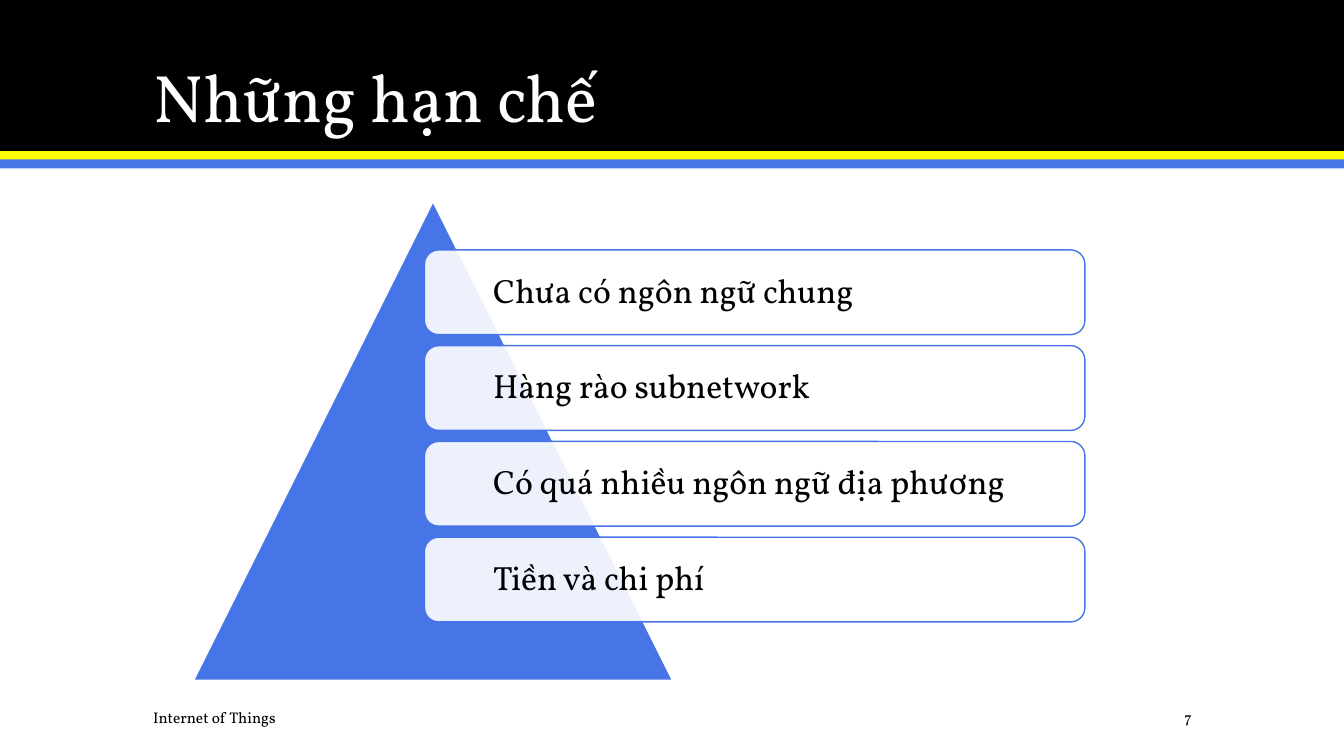
from lxml import etree
from pptx import Presentation
from pptx.dml.color import RGBColor
from pptx.enum.shapes import MSO_SHAPE
from pptx.enum.text import MSO_ANCHOR, MSO_AUTO_SIZE, PP_ALIGN
from pptx.oxml.ns import qn
from pptx.util import Inches, Pt

RECT, TRIANGLE = MSO_SHAPE.RECTANGLE, MSO_SHAPE.ISOSCELES_TRIANGLE
CARD = MSO_SHAPE.ROUNDED_RECTANGLE
MIDDLE, BOTTOM = MSO_ANCHOR.MIDDLE, MSO_ANCHOR.BOTTOM
LEFT, RIGHT = PP_ALIGN.LEFT, PP_ALIGN.RIGHT

# Content
TITLE = "Những hạn chế"
LIMITATIONS = [
    "Chưa có ngôn ngữ chung",
    "Hàng rào subnetwork",
    "Có quá nhiều ngôn ngữ địa phương",
    "Tiền và chi phí",
]
FOOTER = "Internet of Things"
PAGE = "7"

# Style and layout, in inches
FONT = "Vollkorn"
BLACK, WHITE, YELLOW, BLUE = "000000", "FFFFFF", "FFFF00", "4775E7"
SLIDE_W, SLIDE_H = 13.33, 7.5
BANDS = [(0, 1.5, BLACK), (1.5, 0.09, YELLOW), (1.58, 0.09, BLUE)]
TITLE_BOX = (1.42, 0.28, 10.5, 1.13)
PYRAMID_BOX = (1.92, 2, 4.75, 4.75)
CARD_LEFT, CARD_TOP, CARD_W, CARD_H = 4.21, 2.48, 6.55, 0.84
CARD_PITCH = 0.95
CARD_INDENT = 0.64
FOOTER_ITEMS = [
    (PAGE, (10.42, 6.97, 1.5, 0.3), RIGHT),
    (FOOTER, (1.42, 6.97, 6.83, 0.3), LEFT),
]


def color(hex_value):
    return RGBColor.from_string(hex_value)


def add_block(slide, preset, box, fill, line=None):
    block = slide.shapes.add_shape(preset, *map(Inches, box))
    block.shadow.inherit = False
    block.fill.solid()
    block.fill.fore_color.rgb = color(fill)
    if line:
        block.line.color.rgb = color(line)
        block.line.width = Pt(1)
    else:
        block.line.fill.background()
    return block


def set_opacity(block, percent):
    fill_color = block.fill._xPr.find(qn("a:solidFill"))[0]
    etree.SubElement(fill_color, qn("a:alpha"), val=str(percent * 1000))


def write(holder, text, size, ink=BLACK, align=LEFT, spacing=1.0, **frame_format):
    frame = holder.text_frame
    frame_values = {
        "word_wrap": True,
        "auto_size": MSO_AUTO_SIZE.NONE,
        "vertical_anchor": MIDDLE,
        **frame_format,
    }
    for name, value in frame_values.items():
        setattr(frame, name, value)
    frame.text = text
    paragraph = frame.paragraphs[0]
    paragraph.alignment = align
    paragraph.line_spacing = spacing
    for name, value in {"name": FONT, "size": Pt(size)}.items():
        setattr(paragraph.runs[0].font, name, value)
    paragraph.runs[0].font.color.rgb = color(ink)


def main():
    deck = Presentation()
    deck.slide_width, deck.slide_height = Inches(SLIDE_W), Inches(SLIDE_H)
    slide = deck.slides.add_slide(deck.slide_layouts[5])

    # Header bands, with the title brought in front of them
    for top, height, fill in BANDS:
        add_block(slide, RECT, (0, top, SLIDE_W, height), fill)
    title = slide.shapes.title
    for side, value in zip(("left", "top", "width", "height"), TITLE_BOX):
        setattr(title, side, Inches(value))
    write(title, TITLE, 48, WHITE, spacing=0.9, vertical_anchor=BOTTOM)
    slide.shapes._spTree.append(title._element)

    # Pyramid with one translucent card per limitation
    add_block(slide, TRIANGLE, PYRAMID_BOX, BLUE, WHITE)
    for index, limitation in enumerate(LIMITATIONS):
        top = CARD_TOP + index * CARD_PITCH
        card = add_block(slide, CARD, (CARD_LEFT, top, CARD_W, CARD_H), WHITE, BLUE)
        set_opacity(card, 90)
        write(card, limitation, 24, spacing=0.9, margin_left=Inches(CARD_INDENT))

    # Page number and footer
    for text, box, align in FOOTER_ITEMS:
        write(slide.shapes.add_textbox(*map(Inches, box)), text, 11, align=align)

    deck.save("out.pptx")


if __name__ == "__main__":
    main()
